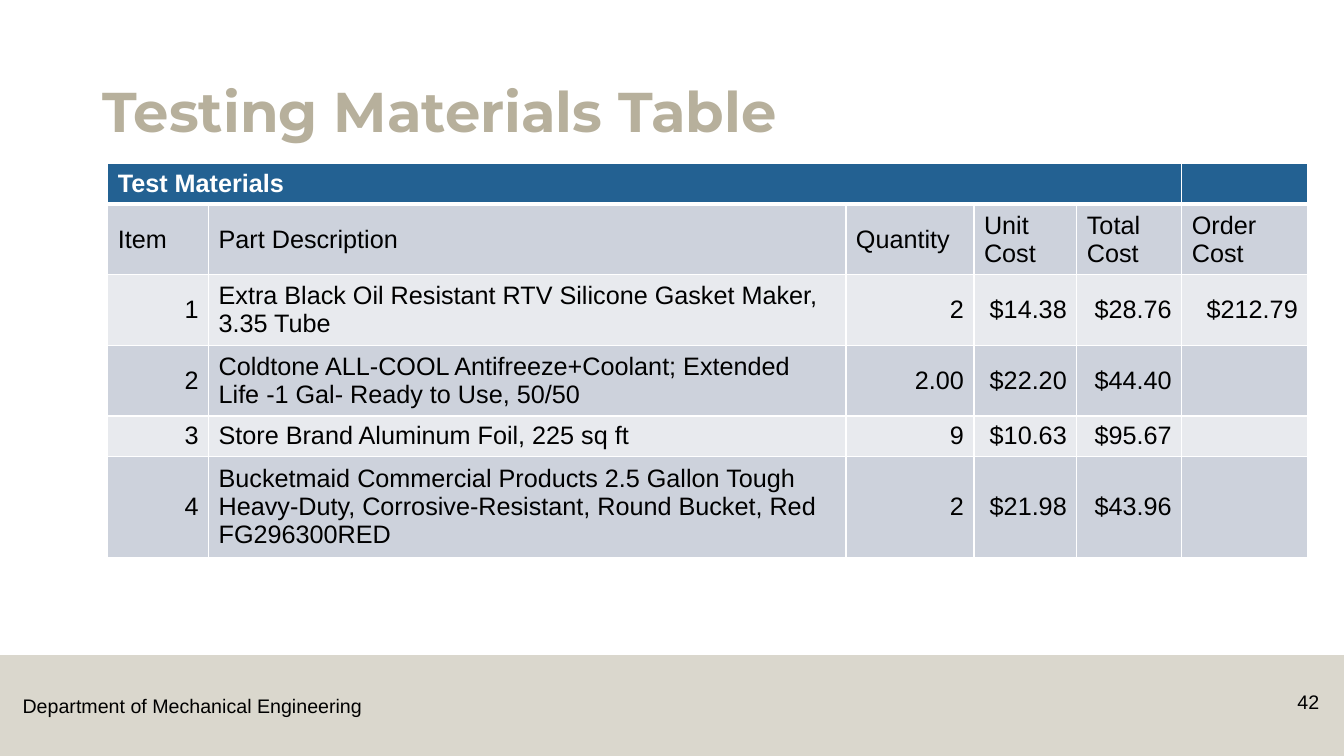
"""Build the testing materials table slide."""
import lxml.etree
import pptx
import pptx.dml.color
import pptx.enum.dml
import pptx.enum.shapes
import pptx.enum.text
import pptx.oxml.ns
import pptx.util

Pt = pptx.util.Pt
Align = pptx.enum.text.PP_ALIGN
Anchor = pptx.enum.text.MSO_ANCHOR
qn = pptx.oxml.ns.qn
COLORS = {"tan": "B7B09C", "blue": "236192", "dark_band": "CDD2DC",
          "light_band": "E8EAEE", "white": "FFFFFF", "black": "000000"}


def write_text(frame, text, size=18, font="Arial", color="black", bold=False,
               align=Align.LEFT, spacing=None):
    para = frame.paragraphs[0]
    para.alignment = align
    para.line_spacing = spacing
    span = para.add_run()
    span.text = text
    span.font.size = Pt(size)
    span.font.name = font
    span.font.bold = bold
    span.font.color.rgb = pptx.dml.color.RGBColor.from_string(COLORS[color])


def format_cell(cell, fill, top, bottom):
    cell.vertical_anchor = Anchor.MIDDLE
    cell.fill.solid()
    cell.fill.fore_color.rgb = pptx.dml.color.RGBColor.from_string(COLORS[fill])
    properties = cell._tc.get_or_add_tcPr()
    borders = {"a:lnL": 1, "a:lnR": 1, "a:lnT": top, "a:lnB": bottom}
    for position, (side, width) in enumerate(borders.items()):
        line = lxml.etree.Element(qn(side), w=str(Pt(width)))
        solid = lxml.etree.SubElement(line, qn("a:solidFill"))
        lxml.etree.SubElement(solid, qn("a:srgbClr"), val=COLORS["white"])
        properties.insert(position, line)


deck = pptx.Presentation()
deck.slide_width, deck.slide_height = Pt(960), Pt(540)
page = deck.slides.add_slide(deck.slide_layouts[5])

band = page.shapes.add_shape(pptx.enum.shapes.MSO_SHAPE.RECTANGLE,
                             Pt(0), Pt(468), Pt(960), Pt(72))
band.shadow.inherit = False
band.line.fill.background()
band.fill.solid()
band.fill.fore_color.rgb = pptx.dml.color.RGBColor.from_string(COLORS["tan"])
band_color = band.fill._xPr.find(qn("a:solidFill"))[0]
lxml.etree.SubElement(band_color, qn("a:alpha"), val="50000")

department = page.shapes.add_textbox(Pt(9), Pt(492), Pt(258.5), Pt(24.5))
department.text_frame.word_wrap = False
write_text(department.text_frame, "Department of Mechanical Engineering", size=14)

title = page.shapes.title
title.left, title.top, title.width, title.height = Pt(66), Pt(28.5), Pt(828), Pt(78.5)
title.text_frame.auto_size = pptx.enum.text.MSO_AUTO_SIZE.NONE
title.text_frame.vertical_anchor = Anchor.BOTTOM
write_text(title.text_frame, "Testing Materials Table", size=40, font="Montserrat",
           color="tan", bold=True, spacing=0.9)

number = page.shapes.add_textbox(Pt(894), Pt(489), Pt(55.5), Pt(28.75))
number.text_frame.word_wrap = True
write_text(number.text_frame, "42", size=14, align=Align.RIGHT)

ROWS = [
    ["Test Materials", "", "", "", "", ""],
    ["Item", "Part Description", "Quantity", "Unit Cost", "Total Cost", "Order Cost"],
    ["1", "Extra Black Oil Resistant RTV Silicone Gasket Maker, 3.35 Tube",
     "2", "$14.38", "$28.76", "$212.79"],
    ["2", "Coldtone ALL-COOL Antifreeze+Coolant; Extended Life -1 Gal- Ready to Use, 50/50",
     "2.00", "$22.20", "$44.40", ""],
    ["3", "Store Brand Aluminum Foil, 225 sq ft", "9", "$10.63", "$95.67", ""],
    ["4", "Bucketmaid Commercial Products 2.5 Gallon Tough Heavy-Duty, "
          "Corrosive-Resistant, Round Bucket, Red FG296300RED",
     "2", "$21.98", "$43.96", ""],
]
WIDTHS = [72, 455.25, 91.5, 73.5, 75, 90]
HEIGHTS = [27.2, 47.4, 47.4, 47.4, 27.2, 67.6]

frame = page.shapes.add_table(len(ROWS), len(WIDTHS), Pt(77), Pt(117),
                              Pt(sum(WIDTHS)), Pt(sum(HEIGHTS)))
table = frame.table
for column, width in zip(table.columns, WIDTHS):
    column.width = Pt(width)
for row, height in zip(table.rows, HEIGHTS):
    row.height = Pt(height)

for row_index, values in enumerate(ROWS):
    header = row_index == 0
    fill = "blue" if header else "dark_band" if row_index % 2 else "light_band"
    for column_index, text in enumerate(values):
        cell = table.cell(row_index, column_index)
        format_cell(cell, fill, top=3 if row_index == 1 else 1, bottom=3 if header else 1)
        if text:
            numeric = row_index > 1 and column_index != 1
            write_text(cell.text_frame, text, bold=header,
                       color="white" if header else "black",
                       align=Align.RIGHT if numeric else Align.LEFT)
table.cell(0, 0).merge(table.cell(0, 4))

deck.save("out.pptx")
